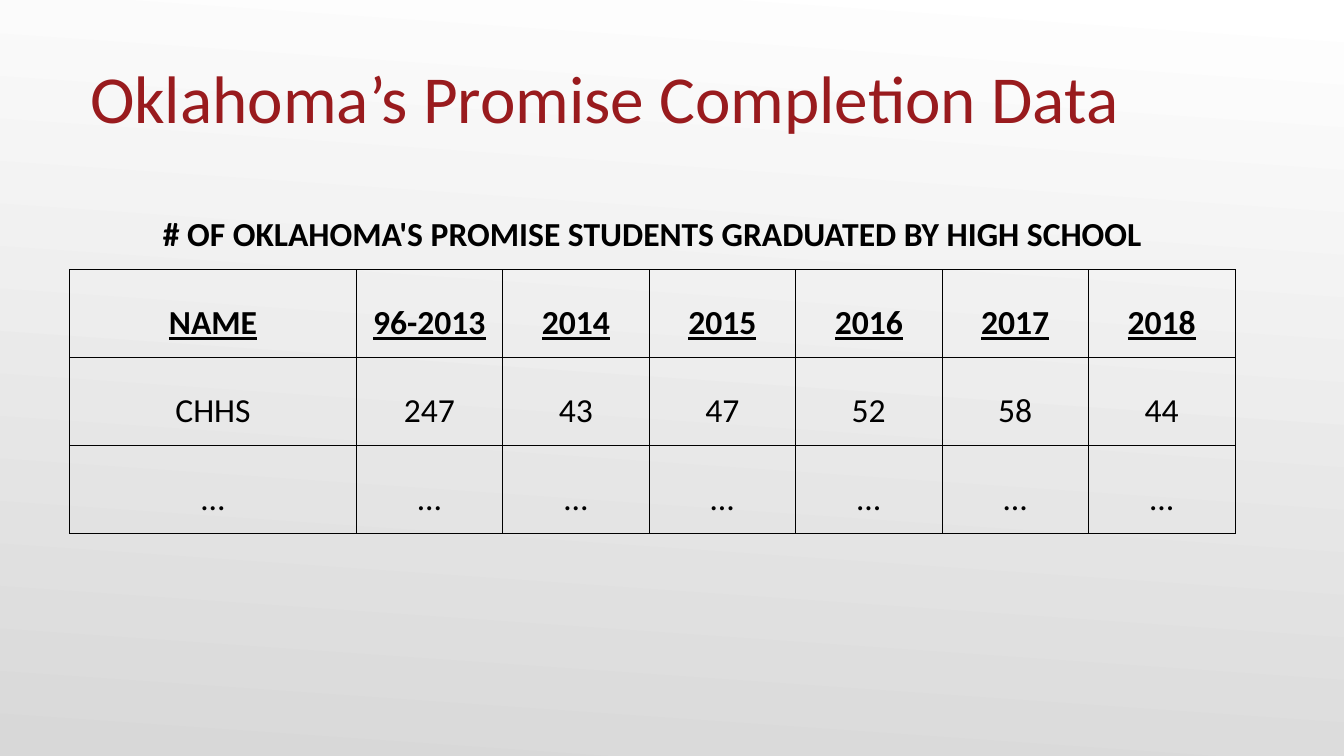
import pptx
import pptx.dml.color
import pptx.enum.text
import pptx.oxml.ns
import pptx.util
from lxml import etree

Inches = pptx.util.Inches
Pt = pptx.util.Pt
FONT = "Calibri"
BLACK = "000000"
BORDER_TAGS = ("a:lnL", "a:lnR", "a:lnT", "a:lnB")
COLUMN_WIDTHS = [2.13] + [1.09] * 6
TABLE_HEIGHT = 2.62
ROWS = [
    ["# OF OKLAHOMA'S PROMISE STUDENTS GRADUATED BY HIGH SCHOOL"] + [""] * 6,
    ["NAME", "96-2013", "2014", "2015", "2016", "2017", "2018"],
    ["CHHS", "247", "43", "47", "52", "58", "44"],
    ["…"] * 7,
]


def rgb(color):
    return pptx.dml.color.RGBColor.from_string(color)


def set_background(s):
    fill = s.background.fill
    fill.gradient()
    fill.gradient_angle = 266  # counter-clockwise
    for stop, color in zip(fill.gradient_stops, ("FFFFFF", "D8D8D8")):
        stop.color.rgb = rgb(color)


def set_font(p, size, color, bold=False, underline=False):
    font = p.font
    font.name = FONT
    font.size = Pt(size)
    font.color.rgb = rgb(color)
    font.bold = bold
    font.underline = underline


def add_title(s, text):
    tf = s.shapes.add_textbox(Inches(0.67), Inches(0.39), Inches(9), Inches(0.63)).text_frame
    tf.word_wrap = True
    tf.vertical_anchor = pptx.enum.text.MSO_ANCHOR.BOTTOM
    tf.margin_left = tf.margin_right = tf.margin_bottom = 0
    tf.margin_top = Inches(0.05)
    p = tf.paragraphs[0]
    p.text = text
    set_font(p, 36, "991B1E")


def set_borders(cell, visible):
    qn = pptx.oxml.ns.qn
    tc_pr = cell._tc.get_or_add_tcPr()
    for i, tag in enumerate(BORDER_TAGS):
        ln = etree.Element(qn(tag), w=str(Pt(0.5)))
        if tag in visible:
            fill = etree.SubElement(ln, qn("a:solidFill"))
            etree.SubElement(fill, qn("a:srgbClr"), val=BLACK)
        else:
            etree.SubElement(ln, qn("a:noFill"))
        tc_pr.insert(i, ln)  # borders precede the cell fill


def format_cell(cell, text, bold, underline, borders):
    cell.fill.background()
    set_borders(cell, borders)
    cell.vertical_anchor = pptx.enum.text.MSO_ANCHOR.BOTTOM
    cell.margin_left = cell.margin_right = cell.margin_top = Inches(0.01)
    cell.margin_bottom = Inches(0.1)
    p = cell.text_frame.paragraphs[0]
    p.text = text
    p.alignment = pptx.enum.text.PP_ALIGN.CENTER
    p.line_spacing = 1.15
    set_font(p, 18, BLACK, bold, underline)


def add_graduates_table(s):
    table = s.shapes.add_table(
        len(ROWS), len(COLUMN_WIDTHS), Inches(0.52), Inches(1.35),
        Inches(sum(COLUMN_WIDTHS)), Inches(TABLE_HEIGHT)).table
    table.first_row = table.horz_banding = False
    for column, width in zip(table.columns, COLUMN_WIDTHS):
        column.width = Inches(width)
    for i, values in enumerate(ROWS):
        borders = BORDER_TAGS if i else ("a:lnB",)
        for j, text in enumerate(values):
            format_cell(table.cell(i, j), text, i < 2, i == 1, borders)
    # The caption spans the whole first row
    table.cell(0, 0).merge(table.cell(0, len(COLUMN_WIDTHS) - 1))


def main():
    prs = pptx.Presentation()
    prs.slide_width = Inches(10)
    prs.slide_height = Inches(10 * 9 / 16)  # widescreen
    s = prs.slides.add_slide(prs.slide_layouts[6])
    set_background(s)
    add_title(s, "Oklahoma’s Promise Completion Data")
    add_graduates_table(s)
    prs.save("out.pptx")


if __name__ == "__main__":
    main()
